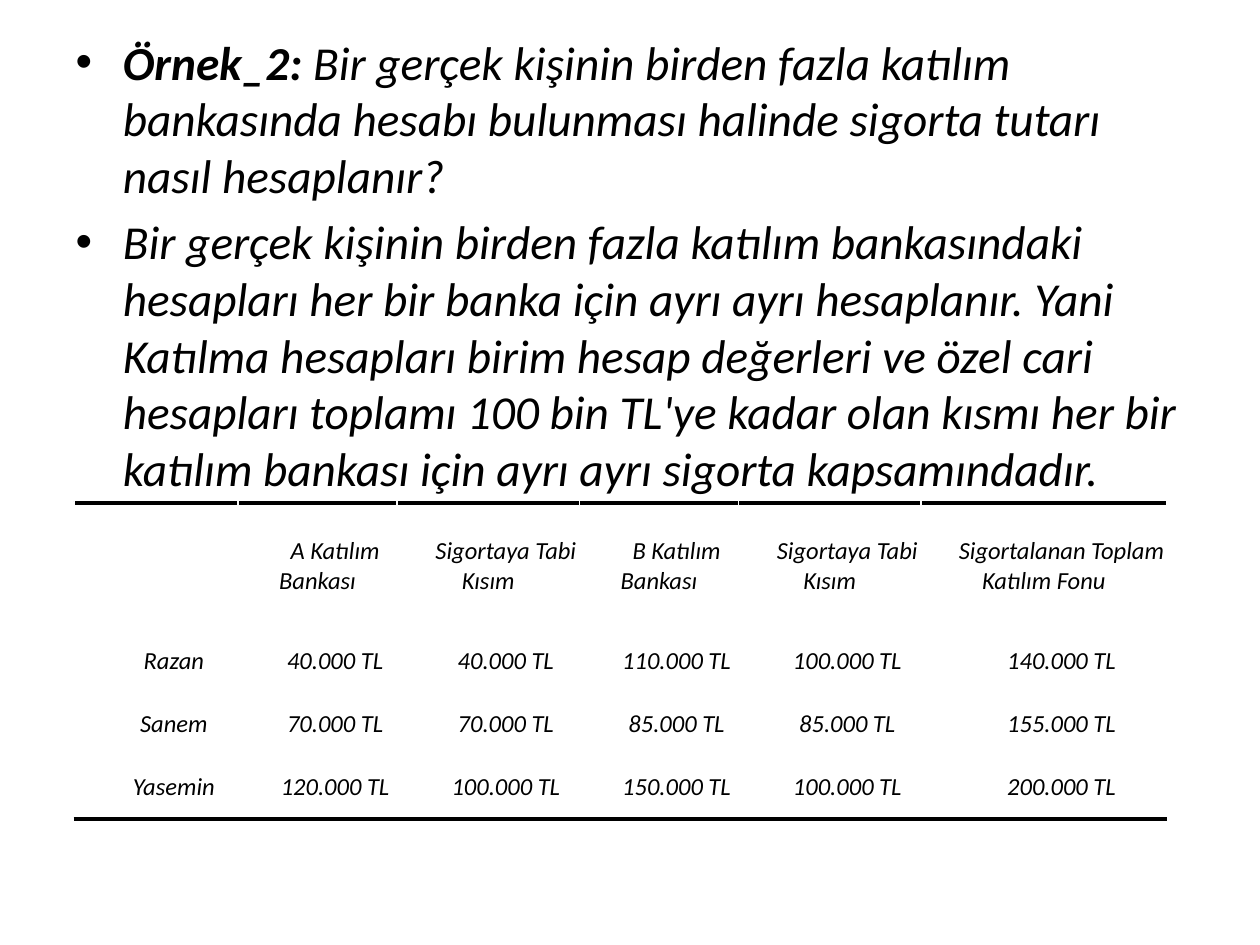
"""Build the slide on deposit insurance across several banks."""
from typing import NamedTuple

from lxml import etree
from pptx import Presentation
from pptx import util as u
from pptx.dml.color import RGBColor
from pptx.enum import text
from pptx.oxml.ns import qn

FONT = "Calibri"
BLACK = "000000"
RULE_WIDTH = u.Pt(2.5)


class Run(NamedTuple):
    text: str
    bold: bool = False


class Row(NamedTuple):
    height: float
    cells: tuple[str, ...]


BULLETS = (
    (
        Run("Örnek_2:", True),
        Run(" Bir gerçek kişinin birden fazla katılım bankasında hesabı "
            "bulunması halinde sigorta tutarı nasıl hesaplanır?"),
    ),
    (
        Run("Bir gerçek kişinin birden fazla katılım bankasındaki hesapları her "
            "bir banka için ayrı ayrı hesaplanır. Yani Katılma hesapları birim "
            "hesap değerleri ve özel cari hesapları toplamı 100 bin TL'ye kadar "
            "olan kısmı her bir katılım bankası için ayrı ayrı sigorta "
            "kapsamındadır."),
    ),
)
WIDTHS = (1.3, 1.26, 1.45, 1.26, 1.45, 1.95)
ROWS = (
    Row(1.01, ("", "A Katılım Bankası", "Sigortaya Tabi Kısım", "B Katılım Bankası",
               "Sigortaya Tabi Kısım", "Sigortalanan Toplam Katılım Fonu")),
    Row(0.5, ("Razan", "40.000 TL", "40.000 TL", "110.000 TL", "100.000 TL", "140.000 TL")),
    Row(0.5, ("Sanem", "70.000 TL", "70.000 TL", "85.000 TL", "85.000 TL", "155.000 TL")),
    Row(0.5, ("Yasemin", "120.000 TL", "100.000 TL", "150.000 TL", "100.000 TL", "200.000 TL")),
)


def color(value: str) -> RGBColor:
    return RGBColor.from_string(value)


def style_font(font, size: float) -> None:
    font.name, font.size, font.italic = FONT, u.Pt(size), True
    font.color.rgb = color(BLACK)


def fill_body(body) -> None:
    body.left, body.top = u.Inches(0.5), u.Inches(0.21)
    body.width, body.height = u.Inches(9), u.Inches(3.78)
    tf = body.text_frame
    tf.auto_size = text.MSO_AUTO_SIZE.NONE
    for i, runs in enumerate(BULLETS):
        p = tf.add_paragraph() if i else tf.paragraphs[0]
        style_font(p.font, 27)
        for run in runs:
            r = p.add_run()
            r.text, r.font.bold = run.text, run.bold


def add_rule(cell, side: str) -> None:
    ln = etree.Element(qn(f"a:ln{side}"), w=str(int(RULE_WIDTH)))
    fill = etree.SubElement(ln, qn("a:solidFill"))
    etree.SubElement(fill, qn("a:srgbClr"), val=BLACK)
    cell._tc.get_or_add_tcPr().insert(0, ln)


def fill_cell(cell, words: str) -> None:
    cell.fill.background()
    cell.vertical_anchor = text.MSO_ANCHOR.MIDDLE
    cell.margin_left = cell.margin_right = cell.margin_top = cell.margin_bottom = 0
    cell.text = words
    p = cell.text_frame.paragraphs[0]
    p.alignment, p.space_after = text.PP_ALIGN.CENTER, u.Pt(6)
    p._p.get_or_add_pPr().set("indent", str(int(u.Inches(0.28))))
    style_font(p.font, 14)


def add_deposit_table(s) -> None:
    height = sum(row.height for row in ROWS)
    table = s.shapes.add_table(
        len(ROWS), len(WIDTHS), u.Inches(0.59), u.Inches(3.99),
        u.Inches(sum(WIDTHS)), u.Inches(height)).table
    table.first_row = table.horz_banding = False
    for column, width in zip(table.columns, WIDTHS):
        column.width = u.Inches(width)
    for i, row in enumerate(ROWS):
        table.rows[i].height = u.Inches(row.height)
        for j, words in enumerate(row.cells):
            fill_cell(table.cell(i, j), words)
    for j in range(len(WIDTHS)):
        add_rule(table.cell(0, j), "T")
        add_rule(table.cell(len(ROWS) - 1, j), "B")


def main() -> None:
    prs = Presentation()
    prs.slide_width, prs.slide_height = u.Inches(10), u.Inches(7.5)
    s = prs.slides.add_slide(prs.slide_layouts[1])
    title = s.shapes.title._element
    title.getparent().remove(title)
    fill_body(s.placeholders[1])
    add_deposit_table(s)
    prs.save("out.pptx")


if __name__ == "__main__":
    main()
